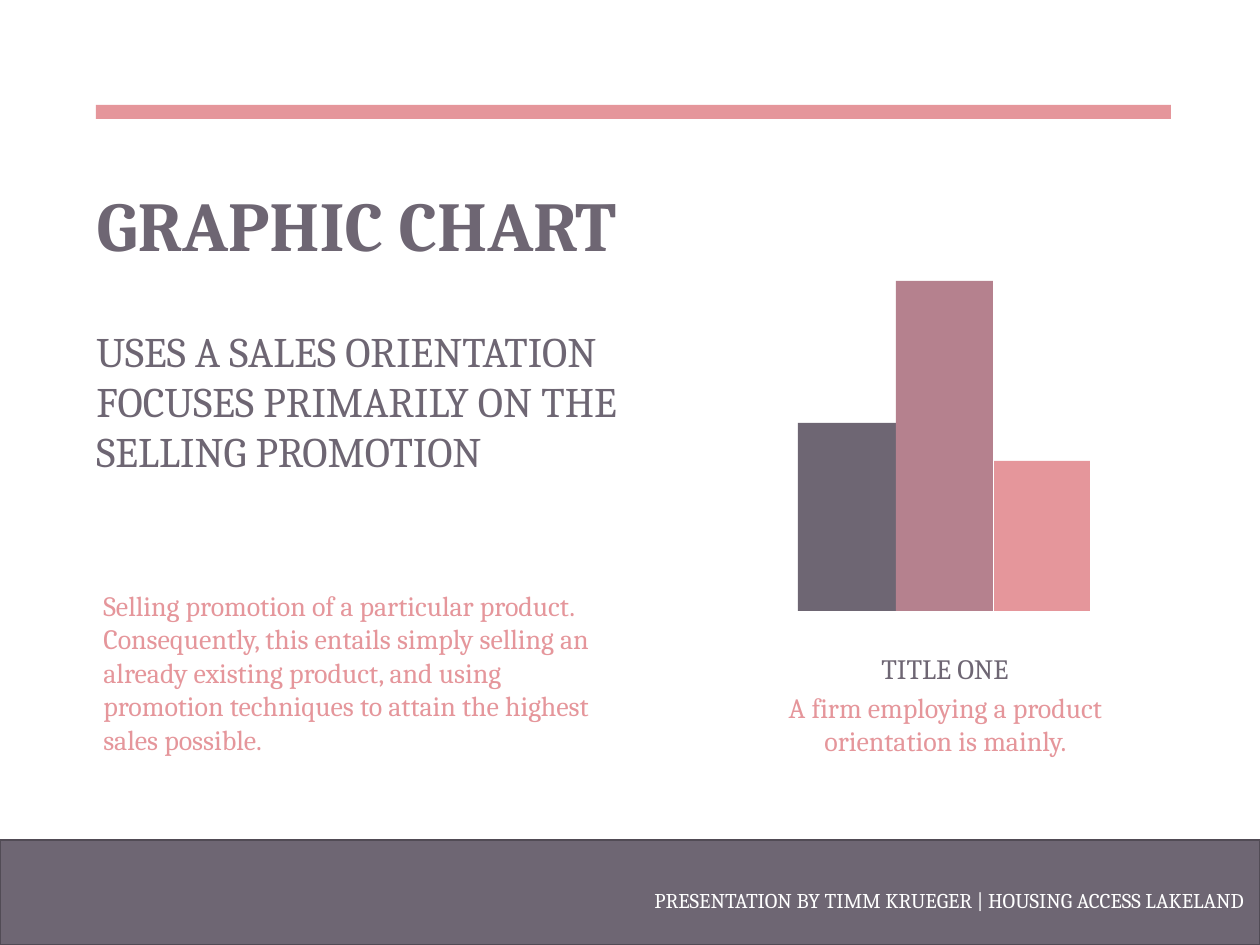
"""Build the graphic chart slide with its text, three bars and footer band."""
from dataclasses import dataclass

from pptx import Presentation
from pptx import util as u
from pptx.dml.color import RGBColor
from pptx.enum import shapes, text

SCALE = u.Inches(1) / 126
FONT = "Cambria"
COLORS = {
    "plum": "6E6673",
    "outline": "514B55",
    "mauve": "B5818E",
    "rose": "E5969B",
    "white": "FFFFFF",
}
BAR_LEFT, BAR_PITCH, BAR_BASE = 798, 98, 611


@dataclass
class Box:
    left: int
    top: int
    width: int
    height: int


@dataclass
class Label:
    words: str
    box: Box
    size: int
    color: str
    align: text.PP_ALIGN = text.PP_ALIGN.LEFT
    bold: bool = False
    wrap: bool = True
    spacing: float = 1.0


@dataclass
class Bar:
    top: int
    width: int
    color: str


TITLE = Label("GRAPHIC CHART", Box(84, 175, 688, 97), 40, "plum", bold=True)
LABELS = [
    Label("USES A SALES ORIENTATION FOCUSES PRIMARILY ON THE SELLING PROMOTION",
          Box(84, 319, 546, 217), 24, "plum"),
    Label("Selling promotion of a particular product. Consequently, this entails "
          "simply selling an already existing product, and using promotion "
          "techniques to attain the highest sales possible.",
          Box(91, 582, 539, 251), 16, "rose"),
    Label("TITLE ONE", Box(862, 645, 166, 47), 16, "plum",
          text.PP_ALIGN.CENTER, wrap=False),
    Label("A firm employing a product orientation is mainly.",
          Box(756, 684, 379, 81), 16, "rose", text.PP_ALIGN.CENTER),
    Label("PRESENTATION BY TIMM KRUEGER | HOUSING ACCESS LAKELAND",
          Box(578, 869, 679, 48), 12, "white", text.PP_ALIGN.RIGHT, spacing=1.5),
]
BARS = [Bar(423, 98, "plum"), Bar(281, 97, "mauve"), Bar(461, 96, "rose")]


def px(n: int) -> u.Emu:
    return u.Emu(round(n * SCALE))


def rgb(name: str) -> RGBColor:
    return RGBColor.from_string(COLORS[name])


def place(box: Box) -> tuple:
    return px(box.left), px(box.top), px(box.width), px(box.height)


def add_rect(s, box: Box, fill: str, line: str = "") -> None:
    sp = s.shapes.add_shape(shapes.MSO_SHAPE.RECTANGLE, *place(box))
    sp.shadow.inherit = False
    sp.fill.solid()
    sp.fill.fore_color.rgb = rgb(fill)
    if line:
        sp.line.color.rgb = rgb(line)
        sp.line.width = u.Pt(1.5)
    else:
        sp.line.fill.background()


def write(sp, label: Label) -> None:
    sp.left, sp.top, sp.width, sp.height = place(label.box)
    tf = sp.text_frame
    tf.word_wrap = label.wrap
    tf.auto_size = text.MSO_AUTO_SIZE.NONE
    tf.vertical_anchor = text.MSO_ANCHOR.TOP
    p = tf.paragraphs[0]
    p.alignment = label.align
    p.line_spacing = label.spacing
    r = p.add_run()
    r.text = label.words
    r.font.name = FONT
    r.font.size = u.Pt(label.size)
    r.font.bold = label.bold
    r.font.color.rgb = rgb(label.color)


def main() -> None:
    prs = Presentation()
    prs.slide_width, prs.slide_height = px(1260), px(945)
    s = prs.slides.add_slide(prs.slide_layouts.get_by_name("Title Only"))

    add_rect(s, Box(0, 840, 1260, 105), "plum", "outline")
    add_rect(s, Box(96, 105, 1075, 14), "rose")
    for i, bar in enumerate(BARS):
        box = Box(BAR_LEFT + i * BAR_PITCH, bar.top, bar.width, BAR_BASE - bar.top)
        add_rect(s, box, bar.color)

    write(s.shapes.title, TITLE)
    for label in LABELS:
        write(s.shapes.add_textbox(*place(label.box)), label)

    prs.save("out.pptx")


if __name__ == "__main__":
    main()
